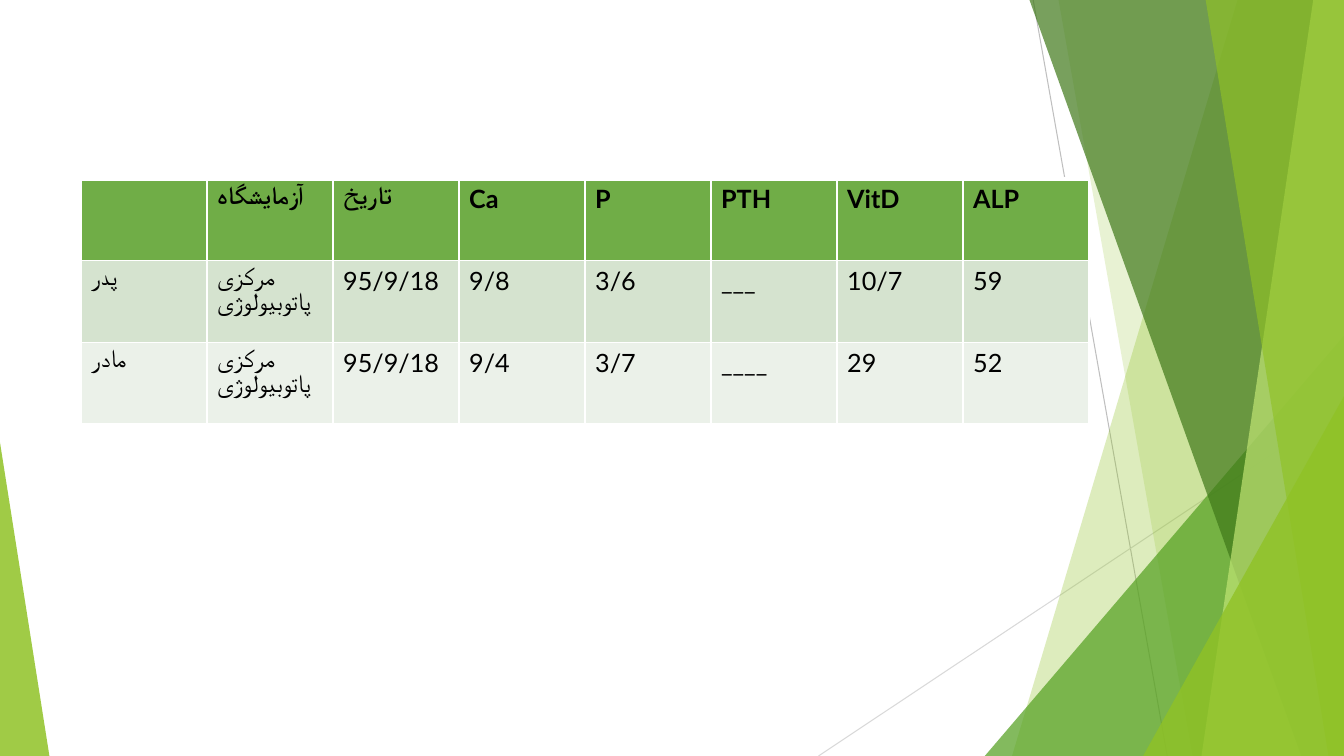
from lxml.etree import SubElement
from pptx import Presentation
from pptx.dml.color import RGBColor
from pptx.enum.shapes import MSO_CONNECTOR as CONN, MSO_SHAPE as SHAPE
from pptx.oxml.ns import qn
from pptx.util import Pt

W, H = 960, 540
BLEED = 0.72
COLORS = {
    "text": "000000", "border": "FFFFFF",
    "header": "70AD47", "father": "D5E3CF", "mother": "EBF1E9",
    "steep": "BFBFBF", "shallow": "D9D9D9",
    "lime": "90C226", "green": "54A021", "dark": "3F7819", "pale": "C0E474",
}
ROWS = [
    ("header", ["", "آزمایشگاه", "تاریخ", "Ca", "P", "PTH", "VitD", "ALP"]),
    ("father", ["پدر", "مرکزی پاتوبیولوژی", "95/9/18", "9/8", "3/6", "___", "10/7", "59"]),
    ("mother", ["مادر", "مرکزی پاتوبیولوژی", "95/9/18", "9/4", "3/7", "____", "29", "52"]),
]


def rgb(name):
    return RGBColor.from_string(COLORS[name])


def paint(sp, color, opacity):
    """Fill a shape with a see-through colour, without line or shadow."""
    sp.shadow.inherit = False
    sp.line.fill.background()
    sp.fill.solid()
    sp.fill.fore_color.rgb = rgb(color)
    clr = sp.fill._xPr.find(qn("a:solidFill"))[0]
    SubElement(clr, qn("a:alpha"), val=str(opacity * 1000))


def add_line(s, x1, y1, x2, y2, color):
    line = s.shapes.add_connector(CONN.STRAIGHT, Pt(x1), Pt(y1), Pt(x2), Pt(y2))
    line.line.color.rgb = rgb(color)
    line.line.width = Pt(0.75)
    SubElement(line._element.spPr, qn("a:effectLst"))


def add_band(s, right, top_x, bottom_x, color, opacity):
    """Full-height band from a slanted left edge to the right border."""
    fb = s.shapes.build_freeform(Pt(top_x), Pt(-BLEED), scale=1.0)
    corners = [(right, -BLEED), (right, H), (bottom_x, H)]
    fb.add_line_segments([(Pt(x), Pt(y)) for x, y in corners], close=True)
    paint(fb.convert_to_shape(), color, opacity)


def add_corner(s, x, w, h, apex, color, opacity):
    """Triangle standing on the bottom edge of the slide."""
    sp = s.shapes.add_shape(SHAPE.ISOSCELES_TRIANGLE, Pt(x), Pt(H - h), Pt(w), Pt(h))
    sp.adjustments[0] = apex
    paint(sp, color, opacity)


def add_facets(s, x, w):
    """Right-hand decoration, from back to front, in the strip x to x + w."""
    right = x + w
    add_line(s, x + 34.56, 0, x + 130.32, H, "steep")
    add_line(s, right, 290.16, x - 118.8, H, "shallow")
    add_band(s, right, x + 180.72, x + 19.44, "lime", 30)
    add_band(s, right, x + 52.56, x + 148.32, "lime", 20)
    add_corner(s, x, w, 300.24, 1, "green", 72)
    add_band(s, right, x + 31.68, x + 226.08, "dark", 70)
    add_band(s, right, x + 234.72, x + 154.8, "pale", 70)
    add_band(s, right, x + 157.68, x + 245.52, "lime", 65)
    add_corner(s, right - 143.52, 143.52, 257.04, 1, "lime", 80)


def style_cell(cell, text, fill, header):
    tcPr = cell._tc.get_or_add_tcPr()
    for side in ("lnL", "lnR", "lnT", "lnB"):
        width = Pt(3 if header and side == "lnT" else 1)
        ln = SubElement(tcPr, qn(f"a:{side}"), w=str(width))
        solid = SubElement(ln, qn("a:solidFill"))
        SubElement(solid, qn("a:srgbClr"), val=COLORS["border"])
    cell.fill.solid()
    cell.fill.fore_color.rgb = rgb(fill)
    if text:
        r = cell.text_frame.paragraphs[0].add_run()
        r.text = text
        r.font.name = "Lato"
        r.font.size = Pt(18)
        r.font.bold = header
        r.font.color.rgb = rgb("text")


def add_lab_table(s, x, y, w, h):
    n_rows, n_cols = len(ROWS), len(ROWS[0][1])
    table = s.shapes.add_table(n_rows, n_cols, Pt(x), Pt(y), Pt(w), Pt(h)).table
    table.horz_banding = False
    for col in table.columns:
        col.width = Pt(w / n_cols)
    for i, (fill, texts) in enumerate(ROWS):
        table.rows[i].height = Pt(h / n_rows)
        for j, text in enumerate(texts):
            style_cell(table.cell(i, j), text, fill, header=i == 0)


def main():
    prs = Presentation()
    prs.slide_width, prs.slide_height = Pt(W), Pt(H)
    s = prs.slides.add_slide(prs.slide_layouts[6])
    add_facets(s, 703.44, W - 703.44)
    add_corner(s, 0, 35.28, 223.92, 0, "lime", 85)
    add_lab_table(s, 57.9, 127.8, 720, 174.96)
    prs.save("out.pptx")


if __name__ == "__main__":
    main()
